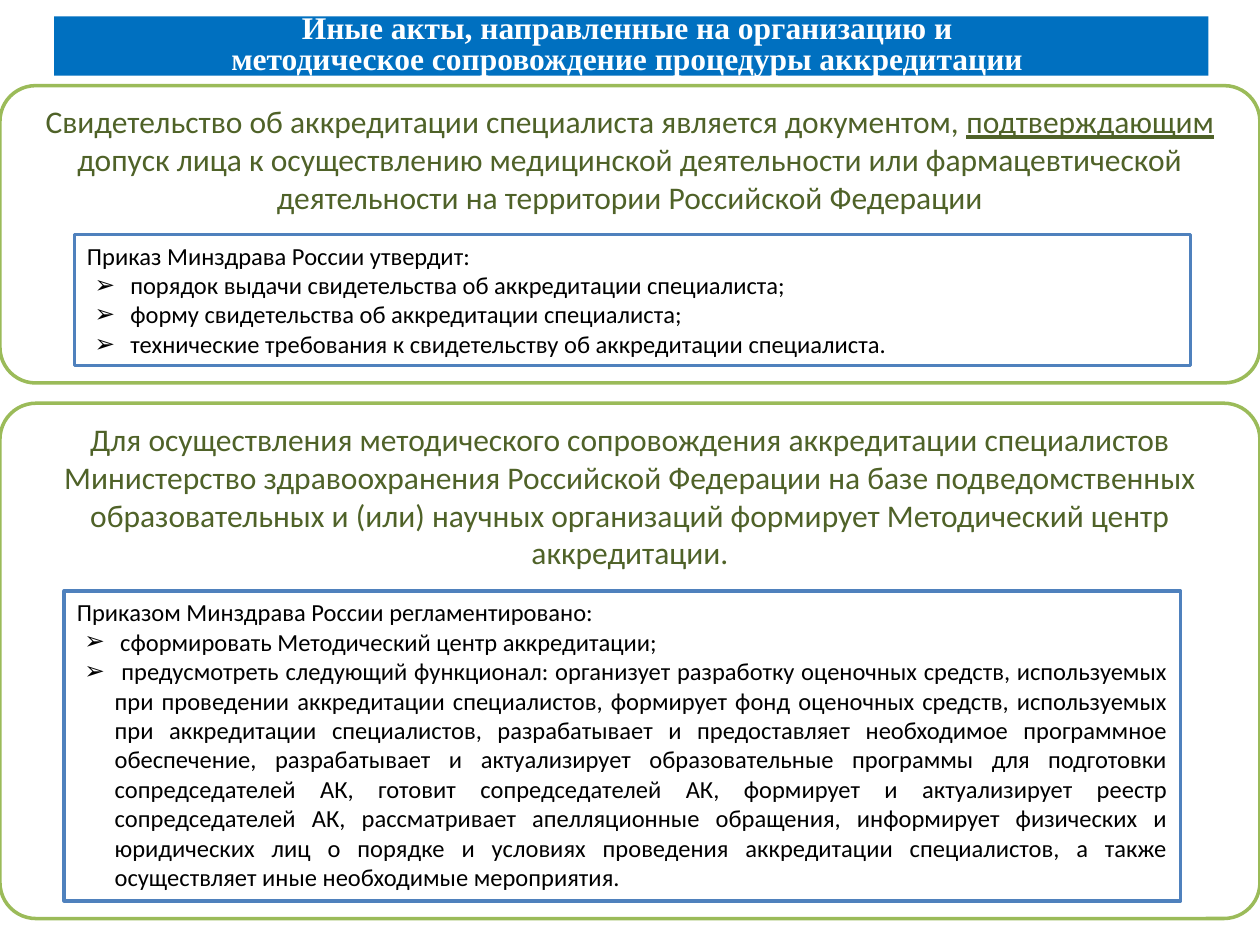
from pptx import Presentation
from pptx.dml.color import RGBColor
from pptx.enum.shapes import MSO_SHAPE
from pptx.enum.text import MSO_ANCHOR, MSO_AUTO_SIZE, PP_ALIGN
from pptx.oxml.xmlchemy import OxmlElement
from pptx.util import Inches, Pt

WHITE = RGBColor(0xFF, 0xFF, 0xFF)
BLACK = RGBColor(0x00, 0x00, 0x00)
BANNER_BLUE = RGBColor(0x00, 0x70, 0xC0)
BOX_BLUE = RGBColor(0x4F, 0x81, 0xBD)
CARD_GREEN = RGBColor(0x9B, 0xBB, 0x59)
TEXT_GREEN = RGBColor(0x4F, 0x62, 0x28)

TITLE = [
    "Иные акты, направленные на организацию и ",
    "методическое сопровождение процедуры аккредитации ",
]
CERTIFICATE = [
    ("Свидетельство об аккредитации специалиста является документом, ", False),
    ("подтверждающим", True),
    (" допуск лица к осуществлению медицинской деятельности или фармацевтической "
     "деятельности на территории Российской Федерации", False),
]
CERTIFICATE_ORDER = [
    "Приказ Минздрава России утвердит:",
    " порядок выдачи свидетельства об аккредитации специалиста;",
    " форму свидетельства об аккредитации специалиста;",
    " технические требования к свидетельству об аккредитации специалиста.",
]
CENTRE = [
    ("Для осуществления методического сопровождения аккредитации специалистов "
     "Министерство здравоохранения Российской Федерации на базе подведомственных "
     "образовательных и (или) научных организаций формирует Методический центр "
     "аккредитации.", False),
]
CENTRE_ORDER = [
    "Приказом Минздрава России регламентировано:",
    " сформировать Методический центр аккредитации;",
    " предусмотреть следующий функционал: организует разработку оценочных средств, "
    "используемых при проведении аккредитации специалистов, формирует фонд оценочных "
    "средств, используемых при аккредитации специалистов, разрабатывает и предоставляет "
    "необходимое программное обеспечение, разрабатывает и актуализирует образовательные "
    "программы для подготовки сопредседателей АК, готовит сопредседателей АК, формирует "
    "и актуализирует реестр сопредседателей АК, рассматривает апелляционные обращения, "
    "информирует физических и юридических лиц о порядке и условиях проведения "
    "аккредитации специалистов, а также осуществляет иные необходимые мероприятия. ",
]


def add_text(p, text, *, size, color, font="Calibri", bold=False, underline=False):
    r = p.add_run()
    r.text = text
    r.font.name = font
    r.font.size = Pt(size)
    r.font.color.rgb = color
    r.font.bold = bold
    r.font.underline = underline


def set_bullet(p, char=None):
    """Give the paragraph a hanging bullet, or none at all."""
    pPr = p._p.get_or_add_pPr()
    pPr.set("marL", str(Inches(0.3) if char else 0))
    pPr.set("indent", str(Inches(-0.24) if char else 0))
    if char:
        bullet = OxmlElement("a:buChar")
        bullet.set("char", char)
    else:
        bullet = OxmlElement("a:buNone")
    pPr.append(bullet)


class SlideBuilder:
    def __init__(self, s):
        self.s = s

    def place(self, sp, left, top, width, height):
        sp.left, sp.top = Inches(left), Inches(top)
        sp.width, sp.height = Inches(width), Inches(height)

    def paint(self, sp, fill, line=None):
        sp.fill.solid()
        sp.fill.fore_color.rgb = fill
        if line is None:
            sp.line.fill.background()
        else:
            sp.line.color.rgb = line
            sp.line.width = Pt(2)

    def paragraphs(self, tf, count):
        return [tf.paragraphs[0]] + [tf.add_paragraph() for _ in range(count - 1)]

    def title(self, lines, *box):
        sp = self.s.shapes.title
        self.place(sp, *box)
        self.paint(sp, BANNER_BLUE)
        tf = sp.text_frame
        tf.auto_size = MSO_AUTO_SIZE.NONE
        tf.vertical_anchor = MSO_ANCHOR.MIDDLE
        for p, line in zip(self.paragraphs(tf, len(lines)), lines):
            p.alignment = PP_ALIGN.CENTER
            p.line_spacing = 0.8
            add_text(p, line, size=18, color=WHITE, font="Times New Roman", bold=True)

    def card(self, runs, top, height, corner):
        sp = self.s.shapes.add_shape(MSO_SHAPE.ROUNDED_RECTANGLE, 0, Inches(top),
                                     Inches(10), Inches(height))
        sp.adjustments[0] = corner
        sp.shadow.inherit = False
        self.paint(sp, WHITE, CARD_GREEN)
        tf = sp.text_frame
        tf.word_wrap = True
        tf.vertical_anchor = MSO_ANCHOR.TOP
        p = tf.paragraphs[0]
        p.alignment = PP_ALIGN.CENTER
        for text, underline in runs:
            add_text(p, text, size=18, color=TEXT_GREEN, underline=underline)

    def order_list(self, idx, lines, align, *box):
        """Fill a body placeholder with a heading and bullets, in front of its card."""
        sp = self.s.placeholders[idx]
        self.s.shapes._spTree.append(sp._element)
        self.place(sp, *box)
        self.paint(sp, WHITE, BOX_BLUE)
        tf = sp.text_frame
        tf.word_wrap = True
        tf.auto_size = MSO_AUTO_SIZE.NONE
        tf.vertical_anchor = MSO_ANCHOR.TOP
        for i, (p, line) in enumerate(zip(self.paragraphs(tf, len(lines)), lines)):
            p.alignment = align
            p.space_before = Pt(0)
            set_bullet(p, "➢" if i else None)
            add_text(p, line, size=14, color=BLACK)


def main():
    prs = Presentation()
    prs.slide_width, prs.slide_height = Inches(10), Inches(7.5)
    two_content = prs.slide_layouts[3]
    b = SlideBuilder(prs.slides.add_slide(two_content))
    b.title(TITLE, 0.43, 0.13, 9.16, 0.47)
    b.card(CERTIFICATE, top=0.68, height=2.36, corner=0.12)
    b.order_list(1, CERTIFICATE_ORDER, PP_ALIGN.LEFT, 0.59, 1.86, 8.86, 1.04)
    b.card(CENTRE, top=3.2, height=4.09, corner=0.07)
    b.order_list(2, CENTRE_ORDER, PP_ALIGN.JUSTIFY, 0.51, 4.69, 8.86, 2.46)
    prs.save("out.pptx")


if __name__ == "__main__":
    main()
